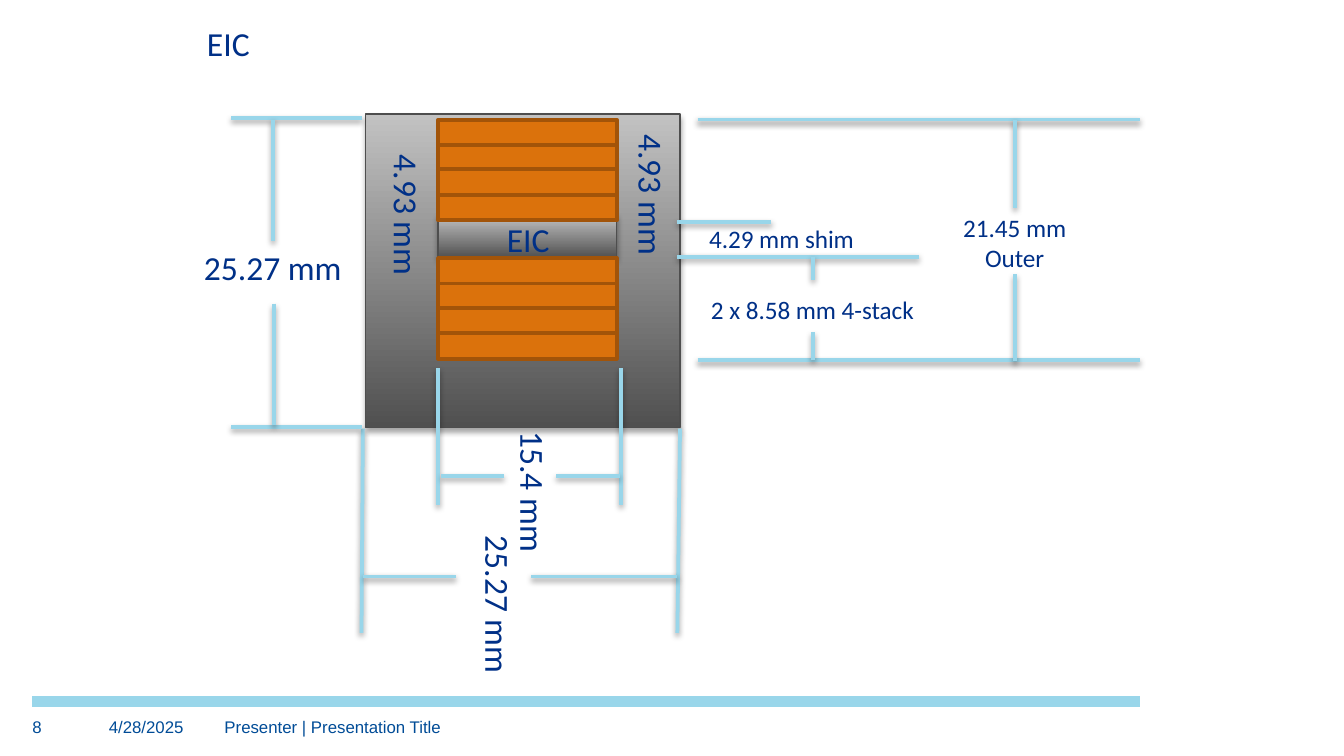
from pptx import Presentation
from pptx.dml.color import RGBColor
from pptx.enum.shapes import MSO_CONNECTOR, MSO_SHAPE
from pptx.enum.text import MSO_ANCHOR, MSO_AUTO_SIZE, PP_ALIGN
from pptx.oxml import parse_xml
from pptx.oxml.ns import nsdecls
from pptx.util import Pt

PX = 9144
SLIDE_WIDTH = 1000
WHITE = RGBColor(0xFF, 0xFF, 0xFF)
SKY = RGBColor(0x99, 0xD6, 0xEA)
NAVY = RGBColor(0x00, 0x30, 0x87)
FOOTER_BLUE = RGBColor(0x00, 0x4C, 0x97)
COIL = RGBColor(0xDB, 0x72, 0x0C)
COIL_EDGE = RGBColor(0xA2, 0x54, 0x09)
STEEL_DARK = RGBColor(0x50, 0x50, 0x50)
STEEL_LIGHT = RGBColor(0xC2, 0xC2, 0xC2)
STEEL_EDGE = RGBColor(0x4E, 0x4E, 0x4E)

TITLE = ("EIC", (144, 12, 681, 40))
FOOTER = [
    ("8", (24, 533, 45, 19)),
    ("4/28/2025", (81, 533, 74, 20)),
    ("Presenter | Presentation Title", (167, 533, 685, 20)),
]
FOOTER_RULE = (24, 522, 848, 522)

YOKE = (272, 85, 234, 233)
SHIM = (326, 160, 133, 32)
COIL_LEFT, COIL_WIDTH, COIL_HEIGHT = 326, 133, 19
STACK_TOPS = [89, 192]
COILS_PER_STACK = 4
COIL_PITCH = 18.7

DIMENSION_LINES = [
    (519, 89, 848, 89), (519, 268, 848, 268),
    (755, 89, 755, 155), (755, 204, 755, 269),
    (504, 165, 574, 165), (504, 191, 684, 191),
    (605, 208, 605, 191), (605, 268, 605, 247),
    (326, 274, 326, 376), (462, 274, 462, 376),
    (375, 354, 328, 354), (461, 354, 414, 354),
    (270, 319, 269, 471), (506, 319, 504, 471),
    (339, 429, 270, 429), (504, 429, 395, 429),
    (269, 88, 172, 88), (269, 318, 172, 318),
    (203, 89, 203, 179), (204, 226, 204, 316),
]

LABELS = [
    ("21.45 mm Outer", (696, 153, 118, 56), 13.5, 0),
    ("4.29 mm shim", (498, 161, 167, 33), 13.5, 0),
    ("2 x 8.58 mm 4-stack", (511, 214, 187, 33), 13.5, 0),
    ("EIC", (354, 158, 78, 40), 18, 0),
    ("25.27 mm", (140, 179, 126, 40), 18, 0),
    ("15.4 mm", (334, 346, 126, 40), 18, 90),
    ("25.27 mm", (308, 430, 126, 40), 18, 90),
    ("4.93 mm", (422, 125, 126, 40), 18, 90),
    ("4.93 mm", (240, 140, 126, 40), 18, 90),
]


def scale(lengths):
    return [length * PX for length in lengths]


def add_effects(shape, distance=0, opacity=0):
    shadow = ""
    if distance:
        shadow = (
            f'<a:outerShdw blurRad="{Pt(3.1)}" dist="{Pt(distance)}" dir="5400000" rotWithShape="0">'
            f'<a:srgbClr val="000000"><a:alpha val="{opacity * 1000}"/></a:srgbClr></a:outerShdw>'
        )
    effects = parse_xml(f'<a:effectLst {nsdecls("a")}>{shadow}</a:effectLst>')
    shape._element.spPr.append(effects)


def add_line(slide, points, width):
    line = slide.shapes.add_connector(MSO_CONNECTOR.STRAIGHT, *scale(points))
    line.line.color.rgb = SKY
    line.line.width = Pt(width)
    return line


def add_steel(slide, box):
    steel = slide.shapes.add_shape(MSO_SHAPE.RECTANGLE, *scale(box))
    steel.fill.gradient()
    steel.fill.gradient_angle = 90
    for stop, color in zip(steel.fill.gradient_stops, (STEEL_DARK, STEEL_LIGHT)):
        stop.color.rgb = color
    steel.line.color.rgb = STEEL_EDGE
    steel.line.width = Pt(0.75)
    add_effects(steel, 1.8, 35)


def add_coil(slide, top):
    coil = slide.shapes.add_shape(
        MSO_SHAPE.RECTANGLE, *scale((COIL_LEFT, top, COIL_WIDTH, COIL_HEIGHT)))
    coil.shadow.inherit = False
    coil.fill.solid()
    coil.fill.fore_color.rgb = COIL
    coil.line.color.rgb = COIL_EDGE
    coil.line.width = Pt(2)


def set_text(shape, text, size, font_name, color, align=PP_ALIGN.LEFT):
    frame = shape.text_frame
    frame.text = text
    frame.word_wrap = True
    frame.vertical_anchor = MSO_ANCHOR.TOP
    paragraph = frame.paragraphs[0]
    paragraph.alignment = align
    font = paragraph.runs[0].font
    font.size = Pt(size)
    font.name = font_name
    font.color.rgb = color
    return frame


def main():
    presentation = Presentation()
    presentation.slide_width = SLIDE_WIDTH * PX
    presentation.slide_height = presentation.slide_width * 9 // 16
    slide = presentation.slides.add_slide(presentation.slide_layouts[5])
    slide.background.fill.solid()
    slide.background.fill.fore_color.rgb = WHITE

    text, box = TITLE
    title = slide.shapes.title
    title.left, title.top, title.width, title.height = scale(box)
    frame = set_text(title, text, 18, "Calibri", NAVY)
    frame.auto_size = MSO_AUTO_SIZE.SHAPE_TO_FIT_TEXT

    add_effects(add_line(slide, FOOTER_RULE, 6))
    for text, box in FOOTER:
        footer = slide.shapes.add_textbox(*scale(box))
        frame = set_text(footer, text, 9, "Arial", FOOTER_BLUE)
        frame.margin_left = frame.margin_right = frame.margin_top = frame.margin_bottom = 0

    add_steel(slide, YOKE)
    add_steel(slide, SHIM)
    for stack_top in STACK_TOPS:
        for row in range(COILS_PER_STACK):
            add_coil(slide, stack_top + round(row * COIL_PITCH))

    for points in DIMENSION_LINES:
        add_effects(add_line(slide, points, 2), 1.6, 38)

    for text, box, size, rotation in LABELS:
        label = slide.shapes.add_textbox(*scale(box))
        label.rotation = rotation
        frame = set_text(label, text, size, "Calibri", NAVY, PP_ALIGN.CENTER)
        frame.auto_size = MSO_AUTO_SIZE.SHAPE_TO_FIT_TEXT

    presentation.save("out.pptx")


if __name__ == "__main__":
    main()
